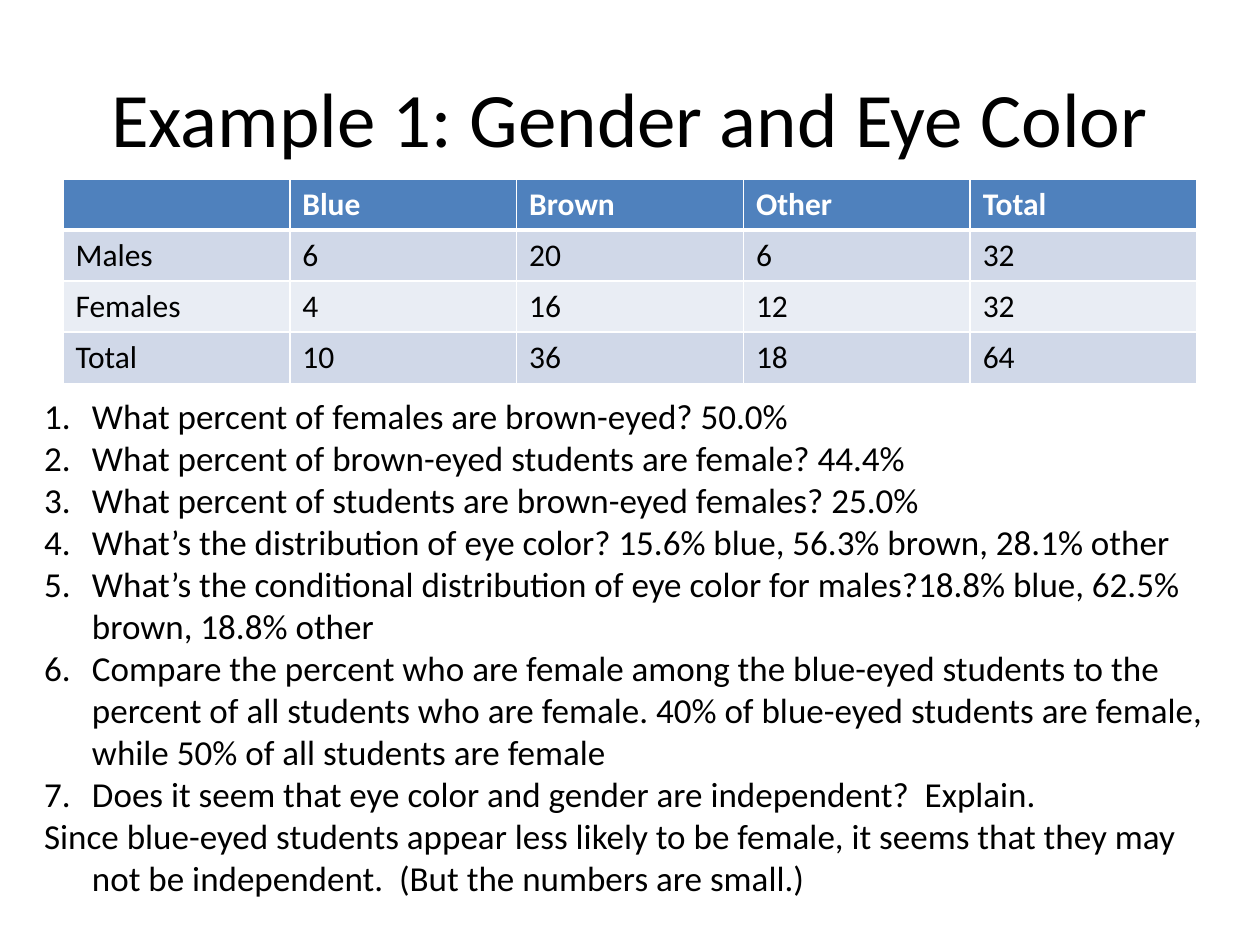
"""Builds a slide with a two-way table of gender and eye color and questions on it."""
from dataclasses import dataclass

from lxml.etree import SubElement
from pptx import Presentation
from pptx.dml.color import RGBColor
from pptx.enum.text import MSO_ANCHOR, MSO_AUTO_SIZE, PP_ALIGN
from pptx.oxml.ns import qn
from pptx.util import Inches, Pt

FONT = "Calibri"
COLORS = {
    "text": "000000",
    "header": "4F81BD",
    "header_text": "FFFFFF",
    "odd_row": "D0D8E8",
    "even_row": "E9EDF4",
    "border": "FFFFFF",
}


@dataclass
class Box:
    left: float
    top: float
    width: float
    height: float

    def lengths(self) -> list:
        return [Inches(n) for n in (self.left, self.top, self.width, self.height)]


@dataclass
class TableRow:
    values: tuple
    fill: str
    text: str = "text"
    bold: bool = False
    bottom_border: int = 1


@dataclass
class Item:
    text: str
    numbered: bool = True


COUNTS = [
    TableRow(("", "Blue", "Brown", "Other", "Total"), "header", "header_text", True, 3),
    TableRow(("Males", "6", "20", "6", "32"), "odd_row"),
    TableRow(("Females", "4", "16", "12", "32"), "even_row"),
    TableRow(("Total", "10", "36", "18", "64"), "odd_row"),
]

QUESTIONS = [
    Item("What percent of females are brown-eyed? 50.0%"),
    Item("What percent of brown-eyed students are female? 44.4%"),
    Item("What percent of students are brown-eyed females? 25.0%"),
    Item("What’s the distribution of eye color? 15.6% blue, 56.3% brown, 28.1% other"),
    Item("What’s the conditional distribution of eye color for males?"
         "18.8% blue, 62.5% brown, 18.8% other"),
    Item("Compare the percent who are female among the blue-eyed students to the "
         "percent of all students who are female. 40% of blue-eyed students are "
         "female, while 50% of all students are female"),
    Item("Does it seem that eye color and gender are independent?  Explain."),
    Item("Since blue-eyed students appear less likely to be female, it seems that "
         "they may not be independent.  (But the numbers are small.)", False),
]


def rgb(name: str) -> RGBColor:
    return RGBColor.from_string(COLORS[name])


def set_font(paragraph, size: int, color: str = "text", bold: bool = False) -> None:
    font = paragraph.font
    font.name, font.size, font.bold = FONT, Pt(size), bold
    font.color.rgb = rgb(color)


def place(shape, box: Box) -> None:
    shape.left, shape.top, shape.width, shape.height = box.lengths()


def add_border(cell, side: str, points: int) -> None:
    line = SubElement(cell._tc.get_or_add_tcPr(), qn(f"a:ln{side}"), w=str(Pt(points)))
    SubElement(SubElement(line, qn("a:solidFill")), qn("a:srgbClr"), val=COLORS["border"])


def fill_title(title, text: str, box: Box) -> None:
    place(title, box)
    title.text_frame.text = text
    title.text_frame.vertical_anchor = MSO_ANCHOR.MIDDLE
    heading = title.text_frame.paragraphs[0]
    heading.alignment = PP_ALIGN.CENTER
    set_font(heading, 44)


def add_counts(slide, rows: list[TableRow], box: Box) -> None:
    counts = slide.shapes.add_table(len(rows), len(rows[0].values), *box.lengths()).table
    top_border = 1
    for r, row in enumerate(rows):
        for c, value in enumerate(row.values):
            cell = counts.cell(r, c)
            cell.text = value
            set_font(cell.text_frame.paragraphs[0], 18, row.text, row.bold)
            borders = {"L": 1, "R": 1, "T": top_border, "B": row.bottom_border}
            for side, points in borders.items():
                add_border(cell, side, points)
            cell.fill.solid()
            cell.fill.fore_color.rgb = rgb(row.fill)
        top_border = row.bottom_border


def fill_questions(body, items: list[Item], box: Box) -> None:
    place(body, box)
    frame = body.text_frame
    frame.word_wrap = True
    frame.auto_size = MSO_AUTO_SIZE.NONE
    frame.text = "\n".join(item.text for item in items)
    for paragraph, item in zip(frame.paragraphs, items):
        paragraph.space_before = Pt(0)
        properties = paragraph._p.get_or_add_pPr()
        properties.set("marL", str(Inches(0.38)))
        properties.set("indent", str(Inches(-0.38)))
        if item.numbered:
            SubElement(properties, qn("a:buFont"), typeface="+mj-lt")
            SubElement(properties, qn("a:buAutoNum"), type="arabicPeriod")
        else:
            SubElement(properties, qn("a:buNone"))
        set_font(paragraph, 20)


def main() -> None:
    presentation = Presentation()
    presentation.slide_width, presentation.slide_height = Inches(10), Inches(7.5)
    slide = presentation.slides.add_slide(presentation.slide_layouts[1])
    title, body = slide.placeholders
    fill_title(title, "Example 1: Gender and Eye Color", Box(0.5, 0.3, 9, 1.25))
    add_counts(slide, COUNTS, Box(0.5, 1.42, 9, 1.62))
    fill_questions(body, QUESTIONS, Box(0.25, 3.08, 9.42, 4.44))
    presentation.save("out.pptx")


if __name__ == "__main__":
    main()
